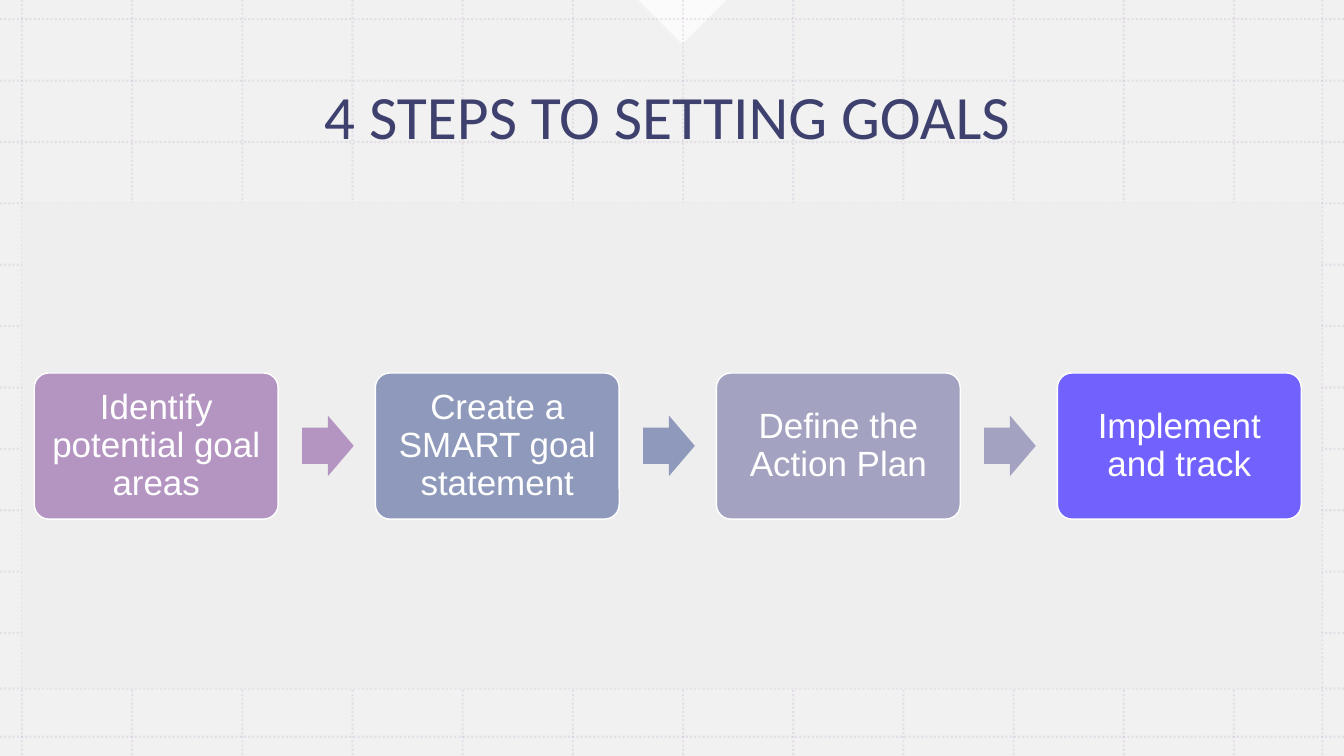
from dataclasses import dataclass

from lxml import etree
from pptx import Presentation
from pptx.dml.color import RGBColor
from pptx.enum import dml, shapes, text
from pptx.oxml import ns
from pptx.shapes.autoshape import Shape
from pptx.slide import Slide
from pptx.util import Pt

WIDTH, HEIGHT = 960, 540
WHITE = RGBColor(0xFF, 0xFF, 0xFF)
PAPER = RGBColor(0xF1, 0xF1, 0xF1)
PANEL = RGBColor(0xEE, 0xEE, 0xEE)
NAVY = RGBColor(0x12, 0x15, 0x4E)
MAUVE = RGBColor(0xB4, 0x95, 0xC2)
SLATE = RGBColor(0x8F, 0x99, 0xBB)
LILAC = RGBColor(0xA3, 0xA3, 0xC1)
VIOLET = RGBColor(0x71, 0x62, 0xFE)
KIND = shapes.MSO_SHAPE


@dataclass
class Box:
    left: float
    top: float
    width: float
    height: float

    def place(self) -> tuple[Pt, Pt, Pt, Pt]:
        return Pt(self.left), Pt(self.top), Pt(self.width), Pt(self.height)


@dataclass
class Step:
    label: str
    color: RGBColor


STEPS = [
    Step("Identify potential goal areas", MAUVE),
    Step("Create a SMART goal statement", SLATE),
    Step("Define the Action Plan", LILAC),
    Step("Implement and track", VIOLET),
]
PITCH = 243.6
COLUMNS = [15.7 + 78.7 * i for i in range(12)] + [944.6]
ROWS = [13.7 + 43.85 * i for i in range(11)] + [491.8, 526.3]


def fade(item: etree._Element, percent: int) -> None:
    """Make every colour within the element partly transparent."""
    for color in item.iter(ns.qn("a:srgbClr")):
        etree.SubElement(color, ns.qn("a:alpha"), val=str(percent * 1000))


def add_shape(slide: Slide, kind: KIND, box: Box, color: RGBColor) -> Shape:
    shape = slide.shapes.add_shape(kind, *box.place())
    shape.shadow.inherit = False
    shape.fill.solid()
    shape.fill.fore_color.rgb = color
    shape.line.fill.background()
    return shape


def add_rule(slide: Slide, x1: float, y1: float, x2: float, y2: float) -> None:
    """Draw one faint dotted line of the grid."""
    rule = slide.shapes.add_connector(
        shapes.MSO_CONNECTOR.STRAIGHT, Pt(x1), Pt(y1), Pt(x2), Pt(y2))
    rule.line.color.rgb = MAUVE
    rule.line.width = Pt(1.5)
    rule.line.dash_style = dml.MSO_LINE.ROUND_DOT
    fade(rule.element, 20)
    etree.SubElement(rule.element.spPr, ns.qn("a:effectLst"))


def set_text(shape: Shape, words: str, font: str, size: float,
             color: RGBColor) -> None:
    frame = shape.text_frame
    frame.text = words
    frame.word_wrap = True
    frame.auto_size = text.MSO_AUTO_SIZE.NONE
    frame.vertical_anchor = text.MSO_ANCHOR.MIDDLE
    line = frame.paragraphs[0]
    line.alignment = text.PP_ALIGN.CENTER
    line.line_spacing = 0.9
    line.font.name = font
    line.font.size = Pt(size)
    line.font.color.rgb = color


def add_step(slide: Slide, step: Step, left: float) -> None:
    card = add_shape(slide, KIND.ROUNDED_RECTANGLE,
                     Box(left, 266.4, 174.2, 104.4), step.color)
    card.adjustments[0] = 0.1
    card.line.color.rgb = WHITE
    card.line.width = Pt(1)
    set_text(card, step.label, "Arial", 25, WHITE)
    frame = card.text_frame
    frame.margin_left = frame.margin_right = Pt(7.2)
    frame.margin_top = frame.margin_bottom = Pt(7.2)


def add_arrow(slide: Slide, color: RGBColor, left: float) -> None:
    arrow = add_shape(slide, KIND.RIGHT_ARROW,
                      Box(left, 296.9, 36.9, 43.2), color)
    arrow.adjustments[0] = 0.6
    arrow.adjustments[1] = 0.5


def add_title(slide: Slide) -> None:
    title = slide.shapes.title
    title.left, title.top, title.width, title.height = Box(
        23.8, 26.6, 905.8, 118.1).place()
    set_text(title, "4 STEPS TO SETTING GOALS", "Calibri", 44, NAVY)
    fade(title.element, 80)
    title.element.getparent().append(title.element)


def main() -> None:
    deck = Presentation()
    deck.slide_width, deck.slide_height = Pt(WIDTH), Pt(HEIGHT)
    slide = deck.slides.add_slide(deck.slide_layouts.get_by_name("Title Only"))
    slide.background.fill.solid()
    slide.background.fill.fore_color.rgb = PAPER

    notch = add_shape(slide, KIND.RIGHT_TRIANGLE,
                      Box(465, -22.3, 44.6, 44.6), WHITE)
    notch.rotation = 315
    fade(notch.element, 75)
    for x in COLUMNS:
        add_rule(slide, x, 0, x, HEIGHT)
    for y in ROWS:
        add_rule(slide, 0, y, WIDTH, y)
    add_shape(slide, KIND.RECTANGLE, Box(15.7, 144.8, 928.2, 347), PANEL)
    add_title(slide)

    for i, step in enumerate(STEPS):
        left = 24.5 + PITCH * i
        add_step(slide, step, left)
        if i < len(STEPS) - 1:
            add_arrow(slide, step.color, left + 191.3)
    deck.save("out.pptx")


if __name__ == "__main__":
    main()
